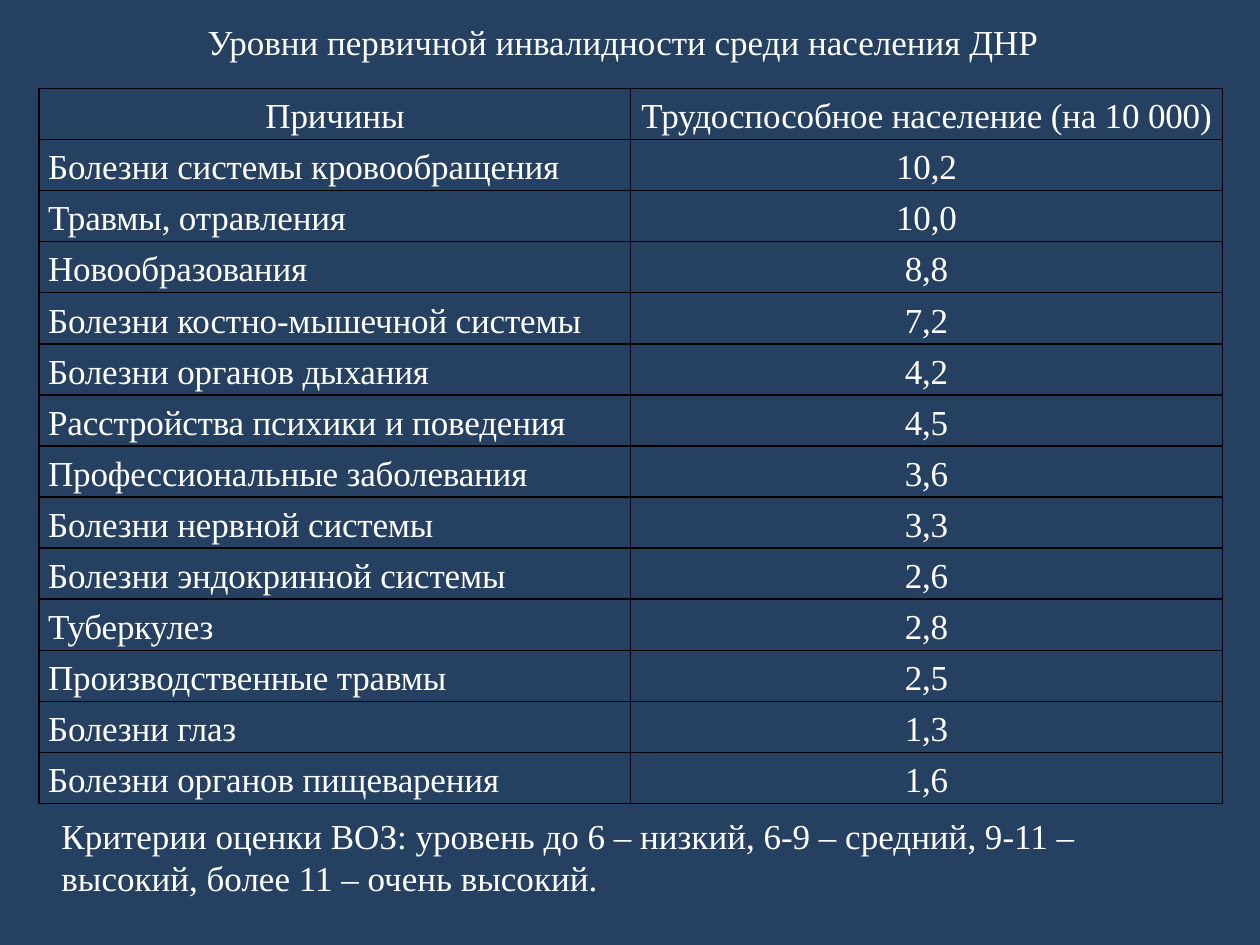
from lxml import etree
from pptx import Presentation
from pptx.dml.color import RGBColor
from pptx.enum.text import MSO_ANCHOR, PP_ALIGN
from pptx.oxml.ns import qn
from pptx.util import Cm, Pt

NAVY = RGBColor(0x25, 0x40, 0x61)
WHITE = RGBColor(0xFF, 0xFF, 0xFF)
BLACK = RGBColor(0x00, 0x00, 0x00)
FONT = "Times New Roman"
LEFT, CENTER = PP_ALIGN.LEFT, PP_ALIGN.CENTER
TOP, MIDDLE = MSO_ANCHOR.TOP, MSO_ANCHOR.MIDDLE

TITLE = "Уровни первичной инвалидности среди населения ДНР"
CRITERIA = ("Критерии оценки ВОЗ: уровень до 6 – низкий, 6-9 – средний, "
            "9-11 – высокий, более 11 – очень высокий.")
ROWS = [
    ("Причины", "Трудоспособное население (на 10 000)"),
    ("Болезни системы кровообращения", "10,2"),
    ("Травмы, отравления", "10,0"),
    ("Новообразования", "8,8"),
    ("Болезни костно-мышечной системы", "7,2"),
    ("Болезни органов дыхания", "4,2"),
    ("Расстройства психики и поведения", "4,5"),
    ("Профессиональные заболевания", "3,6"),
    ("Болезни нервной системы", "3,3"),
    ("Болезни эндокринной системы", "2,6"),
    ("Туберкулез", "2,8"),
    ("Производственные травмы", "2,5"),
    ("Болезни глаз", "1,3"),
    ("Болезни органов пищеварения", "1,6"),
]


def write_text(frame, text, align=LEFT, size=20, color=WHITE, line_spacing=None, tracking=None):
    """Write one formatted paragraph into a text frame."""
    para = frame.paragraphs[0]
    para.alignment = align
    para.line_spacing = line_spacing
    span = para.add_run()
    span.text = text
    span.font.name = FONT
    span.font.size = Pt(size)
    span.font.color.rgb = color
    if tracking is not None:
        span.font._element.set("spc", str(round(tracking * 100)))


def add_text_box(page, box, text, align=LEFT, anchor=TOP, inset=(0.25, 0.13)):
    """Place a wrapping text box with equal opposite insets."""
    frame = page.shapes.add_textbox(*map(Cm, box)).text_frame
    frame.word_wrap = True
    frame.vertical_anchor = anchor
    frame.margin_left = frame.margin_right = Cm(inset[0])
    frame.margin_top = frame.margin_bottom = Cm(inset[1])
    write_text(frame, text, align=align)


def draw_borders(cell, color=BLACK, width=1):
    """Draw a solid line on all four sides of a cell."""
    properties = cell._tc.get_or_add_tcPr()
    for index, side in enumerate(("a:lnL", "a:lnR", "a:lnT", "a:lnB")):
        line = etree.Element(qn(side), w=str(Pt(width)))
        fill = etree.SubElement(line, qn("a:solidFill"))
        etree.SubElement(fill, qn("a:srgbClr"), val=str(color))
        properties.insert(index, line)


def add_causes_table(page, box, rows):
    """Place the table of causes with equal columns and rows."""
    left, top, width, height = box
    table = page.shapes.add_table(len(rows), len(rows[0]), *map(Cm, box)).table
    table.first_row = table.horz_banding = False
    for column in table.columns:
        column.width = Cm(width / len(rows[0]))
    for row_index, values in enumerate(rows):
        table.rows[row_index].height = Cm(height / len(rows))
        for column_index, text in enumerate(values):
            cell = table.cell(row_index, column_index)
            cell.fill.background()
            cell.vertical_anchor = MIDDLE
            cell.margin_left = cell.margin_right = Cm(0.18)
            cell.margin_top = cell.margin_bottom = 0
            align = LEFT if row_index and column_index == 0 else CENTER
            write_text(cell.text_frame, text, align=align, line_spacing=1.15, tracking=-0.1)
            draw_borders(cell)


def main():
    """Build the slide and save the deck."""
    deck = Presentation()
    deck.slide_width, deck.slide_height = Cm(25.4), Cm(19.05)
    page = deck.slides.add_slide(deck.slide_layouts[6])
    page.background.fill.solid()
    page.background.fill.fore_color.rgb = NAVY
    add_text_box(page, (0.79, 0.41, 23.55, 0.86), TITLE, align=CENTER, anchor=MIDDLE, inset=(0, 0))
    add_causes_table(page, (0.79, 1.78, 23.85, 14.43), ROWS)
    add_text_box(page, (0.99, 16.28, 22.81, 1.96), CRITERIA)
    deck.save("out.pptx")


if __name__ == "__main__":
    main()
